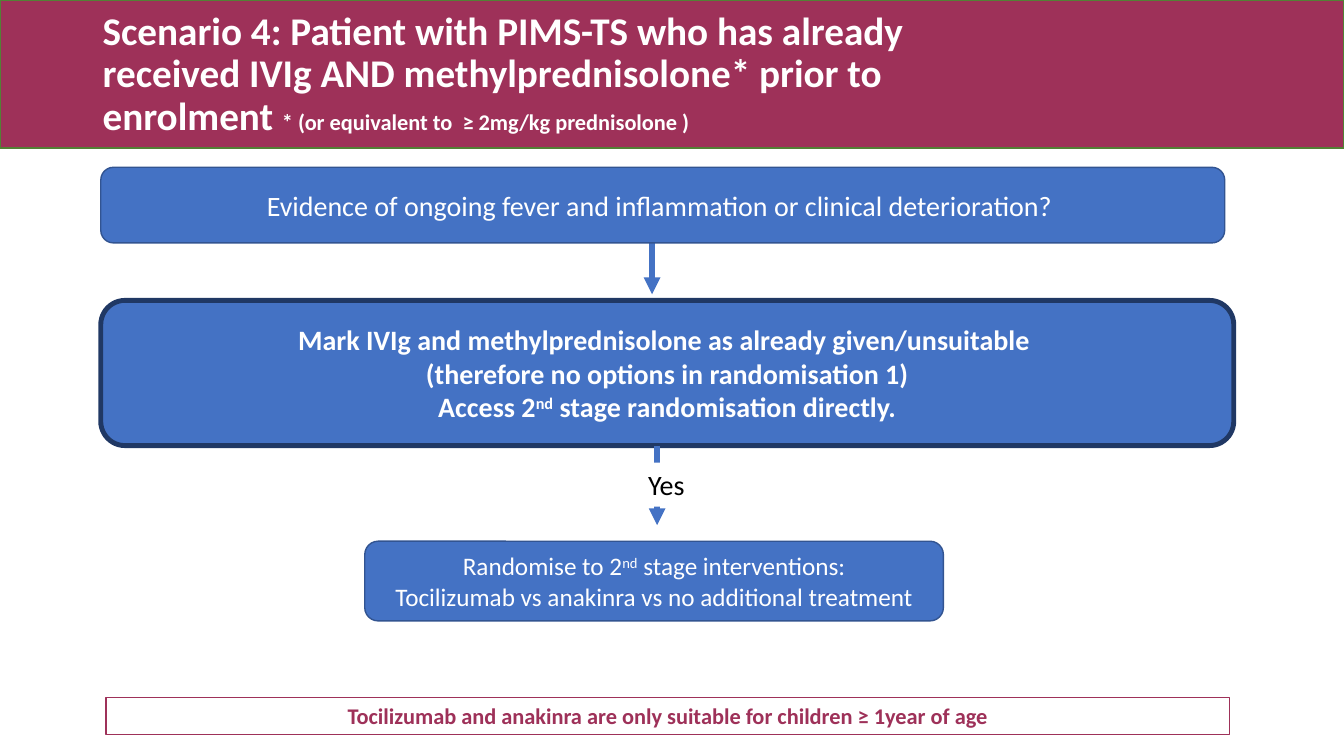
import pptx
import pptx.dml.color
import pptx.enum.shapes
import pptx.enum.text
import pptx.oxml
import pptx.oxml.ns
import pptx.util

Pt = pptx.util.Pt
RGB = pptx.dml.color.RGBColor
Kind = pptx.enum.shapes.MSO_SHAPE
Align = pptx.enum.text.PP_ALIGN
Anchor = pptx.enum.text.MSO_ANCHOR

PLUM = RGB(0x9E, 0x31, 0x59)
GREEN = RGB(0x53, 0x80, 0x35)
BLUE = RGB(0x44, 0x72, 0xC4)
EDGE = RGB(0x32, 0x54, 0x91)
NAVY = RGB(0x20, 0x38, 0x64)
WHITE = RGB(0xFF, 0xFF, 0xFF)
BLACK = RGB(0, 0, 0)


def style(para, size, color, bold, align):
    para.alignment = align
    font = para.font
    font.name = "Calibri"
    font.bold = bold
    font.color.rgb = color
    if size:
        font.size = Pt(size)


def add_box(slide, kind, place, fill=None, line=None, width=1):
    box = slide.shapes.add_shape(kind, *map(Pt, place))
    box.shadow.inherit = False
    if fill is None:
        box.fill.background()
    else:
        box.fill.solid()
        box.fill.fore_color.rgb = fill
    if line is None:
        box.line.fill.background()
    else:
        box.line.color.rgb = line
        box.line.width = Pt(width)
    return box


def write(box, lines, size, color=WHITE, bold=False,
          align=Align.CENTER, anchor=Anchor.MIDDLE):
    frame = box.text_frame
    frame.word_wrap = True
    frame.vertical_anchor = anchor
    for n, line in enumerate(lines):
        para = frame.paragraphs[0] if n == 0 else frame.add_paragraph()
        style(para, size, color, bold, align)
        for k, part in enumerate(line.split("^")):
            run = para.add_run()
            run.text = part
            if k % 2:
                run.font._element.set("baseline", "30000")


def add_title(slide, place, parts):
    box = slide.shapes.add_textbox(*map(Pt, place))
    frame = box.text_frame
    frame.word_wrap = True
    frame.vertical_anchor = Anchor.MIDDLE
    para = frame.paragraphs[0]
    style(para, None, WHITE, True, Align.LEFT)
    para.line_spacing = 0.9
    for text, size in parts:
        run = para.add_run()
        run.text = text
        run.font.size = Pt(size)


def add_arrow(slide, x, top, end):
    arrow = slide.shapes.add_connector(
        pptx.enum.shapes.MSO_CONNECTOR.STRAIGHT, Pt(x), Pt(top), Pt(x), Pt(end))
    arrow.line.color.rgb = BLUE
    arrow.line.width = Pt(4)
    make = pptx.oxml.ns.qn
    tail = arrow.line._get_or_add_ln().makeelement(
        make("a:tailEnd"), {"type": "triangle"})
    arrow.line._get_or_add_ln().append(tail)
    props = arrow._element.spPr
    props.append(props.makeelement(make("a:effectLst"), {}))


def main():
    deck = pptx.Presentation()
    deck.slide_width, deck.slide_height = Pt(960), Pt(540)
    slide = deck.slides.add_slide(deck.slide_layouts[6])

    add_box(slide, Kind.RECTANGLE, (0, 0, 960, 105.8), PLUM, GREEN)
    add_title(slide, (66.2, 1.4, 642.2, 104.4), [
        ("Scenario 4: Patient with PIMS-TS who has already received IVIg "
         "AND methylprednisolone* prior to enrolment ", 28),
        ("* (or equivalent to  ≥ 2mg/kg prednisolone )", 16)])

    add_arrow(slide, 465.8, 173.5, 210.2)
    mark = add_box(slide, Kind.ROUNDED_RECTANGLE,
                   (72, 214.6, 809.3, 103.7), BLUE, NAVY, 3.5)
    write(mark, [
        "Mark IVIg and methylprednisolone as already given/unsuitable ",
        "(therefore no options in randomisation 1)",
        "Access 2^nd^ stage randomisation directly."], 20, bold=True)
    query = add_box(slide, Kind.ROUNDED_RECTANGLE,
                    (72, 119.5, 802.8, 54), BLUE, EDGE)
    write(query, ["Evidence of ongoing fever and inflammation "
                  "or clinical deterioration? "], 20)

    add_arrow(slide, 469.4, 318.3, 375.1)
    yes = add_box(slide, Kind.RECTANGLE, (455.8, 330.5, 48.2, 31.5), WHITE)
    write(yes, ["Yes"], 20, BLACK, align=Align.LEFT, anchor=Anchor.TOP)
    stage = add_box(slide, Kind.ROUNDED_RECTANGLE,
                    (260.6, 386.6, 413.3, 56.9), BLUE, EDGE)
    write(stage, ["Randomise to 2^nd^ stage interventions:",
                  "Tocilizumab vs anakinra vs no additional treatment"], 18)
    note = add_box(slide, Kind.RECTANGLE,
                   (75.6, 498.2, 802.8, 26.6), line=PLUM)
    write(note, ["Tocilizumab and anakinra are only suitable "
                 "for children ≥ 1year of age"], 16, PLUM, True,
          anchor=Anchor.TOP)

    deck.save("out.pptx")


if __name__ == "__main__":
    main()
